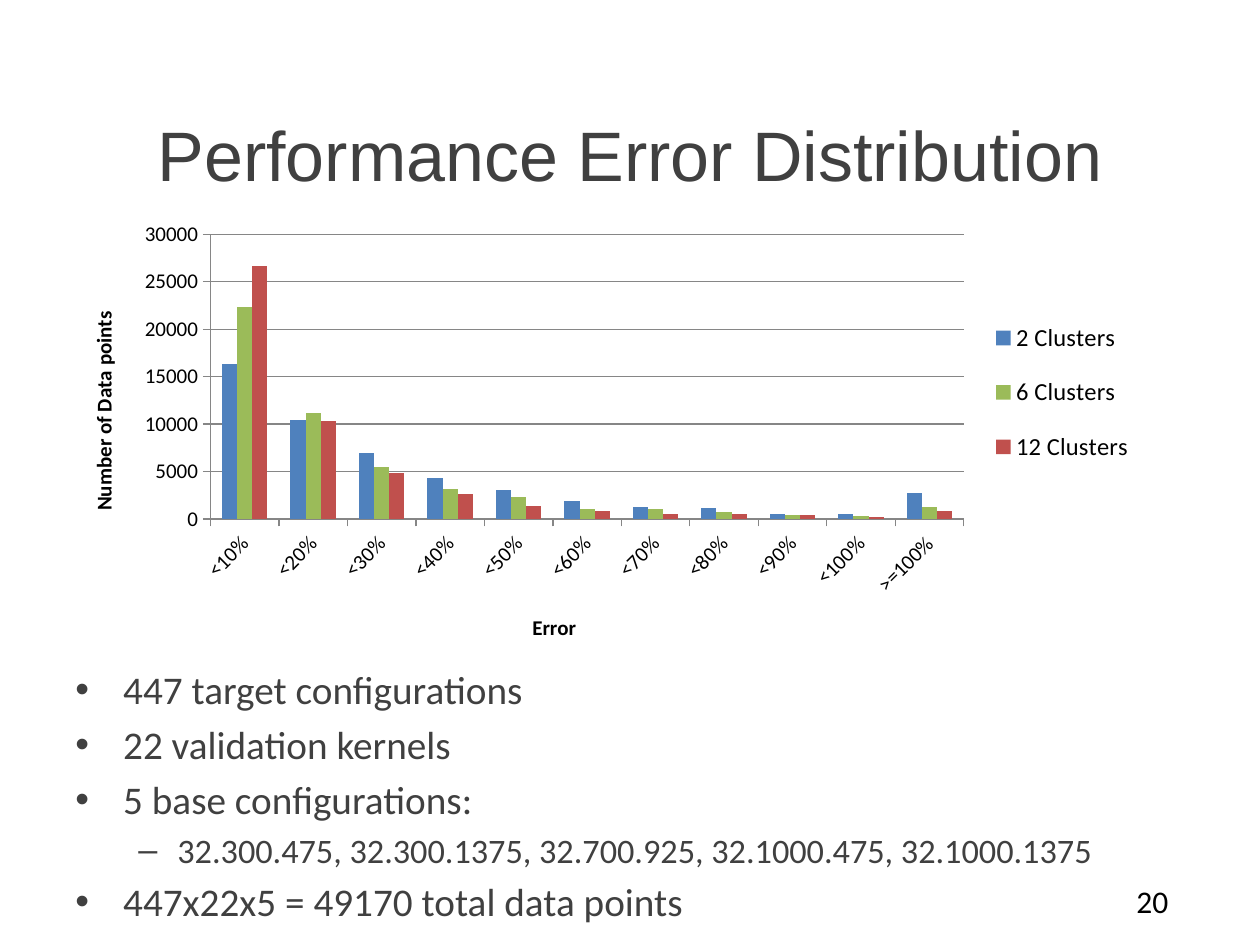
from lxml.etree import Element, SubElement
from pptx import Presentation
from pptx.chart.data import CategoryChartData
from pptx.dml.color import RGBColor
from pptx.enum.chart import XL_CHART_TYPE, XL_LEGEND_POSITION, XL_TICK_MARK
from pptx.enum.text import MSO_ANCHOR, PP_ALIGN
from pptx.oxml.ns import qn
from pptx.util import Inches, Pt

BLACK = RGBColor(0x00, 0x00, 0x00)
DARK = RGBColor(0x40, 0x40, 0x40)
GREY = RGBColor(0x86, 0x86, 0x86)
BLUE = RGBColor(0x4F, 0x81, 0xBD)
GREEN = RGBColor(0x9B, 0xBB, 0x59)
RED = RGBColor(0xC0, 0x50, 0x4D)


def style(font, color, **look):
    """Apply a colour and format values to a font."""
    font.color.rgb = color
    for key, value in look.items():
        setattr(font, key, value)


def add_text(left, top, width, height):
    box = slide.shapes.add_textbox(
        Inches(left), Inches(top), Inches(width), Inches(height))
    box.text_frame.word_wrap = True
    return box.text_frame


deck = Presentation()
deck.slide_width, deck.slide_height = Inches(10), Inches(7.5)
slide = deck.slides.add_slide(deck.slide_layouts[5])

# Title
title = slide.shapes.title
title.left, title.top = Inches(0.5), Inches(0.59)
title.width, title.height = Inches(9), Inches(1.25)
frame = title.text_frame
frame.text = "Performance Error Distribution"
frame.vertical_anchor = MSO_ANCHOR.MIDDLE
frame.paragraphs[0].alignment = PP_ALIGN.CENTER
style(frame.paragraphs[0].runs[0].font, DARK, name="Arial", size=Pt(40))

# Chart
series = [
    ("2 Clusters", BLUE,
     [16300, 10400, 7000, 4300, 3100, 1900, 1300, 1200, 500, 500, 2700]),
    ("6 Clusters", GREEN,
     [22300, 11200, 5500, 3200, 2300, 1100, 1000, 700, 400, 300, 1300]),
    ("12 Clusters", RED,
     [26700, 10300, 4800, 2600, 1400, 800, 500, 500, 400, 200, 800]),
]
data = CategoryChartData()
data.categories = [f" <{n}%" for n in range(10, 101, 10)] + [" >=100%"]
for name, _, values in series:
    data.add_series(name, values)
chart = slide.shapes.add_chart(
    XL_CHART_TYPE.COLUMN_CLUSTERED, Inches(0.5), Inches(1.68),
    Inches(8.58), Inches(3.62), data).chart
style(chart.font, BLACK, name="Calibri", size=Pt(10))
chart.has_title = False

plot = chart.plots[0]
plot.gap_width, plot.overlap = 150, 0
plot.vary_by_categories = False
for bars, (_, color, _) in zip(plot.series, series):
    bars.format.fill.solid()
    bars.format.fill.fore_color.rgb = color

for axis, label in [(chart.category_axis, "Error"),
                    (chart.value_axis, "Number of Data points")]:
    frame = axis.axis_title.text_frame
    frame.text = label
    style(frame.paragraphs[0].runs[0].font, BLACK,
          name="Calibri", size=Pt(12), bold=True)
    style(axis.tick_labels.font, BLACK, name="Calibri", size=Pt(12))
    axis.major_tick_mark = XL_TICK_MARK.OUTSIDE
    axis.format.line.color.rgb = GREY
body = chart.category_axis._element.find(qn("c:txPr")).find(qn("a:bodyPr"))
body.set("rot", "-2700000")

scale = chart.value_axis
scale.minimum_scale, scale.maximum_scale, scale.major_unit = 0, 30000, 5000
scale.has_major_gridlines = True
scale.major_gridlines.format.line.color.rgb = GREY

chart.has_legend = True
chart.legend.position = XL_LEGEND_POSITION.RIGHT
chart.legend.include_in_layout = False
style(chart.legend.font, BLACK, name="Calibri", size=Pt(14))

# Places in the chart, in inches: left, top, width, height
area = chart._chartSpace.chart.plotArea
places = [(area, 0, (1.17, 0.18, 5.98, 2.26)),
          (chart.legend._element, 1, (7.33, 0.69, 1.2, 1.49))]
for part, spot, (left, top, width, height) in places:
    for old in part.findall(qn("c:layout")):
        part.remove(old)
    layout = Element(qn("c:layout"))
    part.insert(spot, layout)
    manual = SubElement(layout, qn("c:manualLayout"))
    if part is area:
        SubElement(manual, qn("c:layoutTarget"), val="inner")
    values = [("xMode", "edge"), ("yMode", "edge"),
              ("x", left / 8.58), ("y", top / 3.62),
              ("w", width / 8.58), ("h", height / 3.62)]
    for tag, value in values:
        SubElement(manual, qn(f"c:{tag}"), val=str(value))

# Bullets: sign, left margin, hanging indent, size
levels = [("•", 0.38, 0.38, 22.4), ("–", 0.81, 0.31, 19.6)]
points = [
    (0, "447 target configurations"),
    (0, "22 validation kernels"),
    (0, "5 base configurations:"),
    (1, "32.300.475, 32.300.1375, 32.700.925, 32.1000.475, 32.1000.1375"),
    (0, "447x22x5 = 49170 total data points"),
]
frame = add_text(0.5, 5.23, 9, 2.06)
for i, (level, text) in enumerate(points):
    sign, margin, hang, size = levels[level]
    para = frame.add_paragraph() if i else frame.paragraphs[0]
    para.level = level
    para.space_before = Pt(size * 0.2)
    run = para.add_run()
    run.text = text
    style(run.font, DARK, name="Calibri", size=Pt(size))
    props = para._p.get_or_add_pPr()
    props.set("marL", str(Inches(margin)))
    props.set("indent", str(-Inches(hang)))
    SubElement(props, qn("a:buFont"), typeface="Arial")
    SubElement(props, qn("a:buChar"), char=sign)

# Slide number
frame = add_text(8.92, 6.95, 0.58, 0.4)
frame.text = "20"
style(frame.paragraphs[0].runs[0].font, BLACK, name="Calibri", size=Pt(18))

deck.save("out.pptx")
